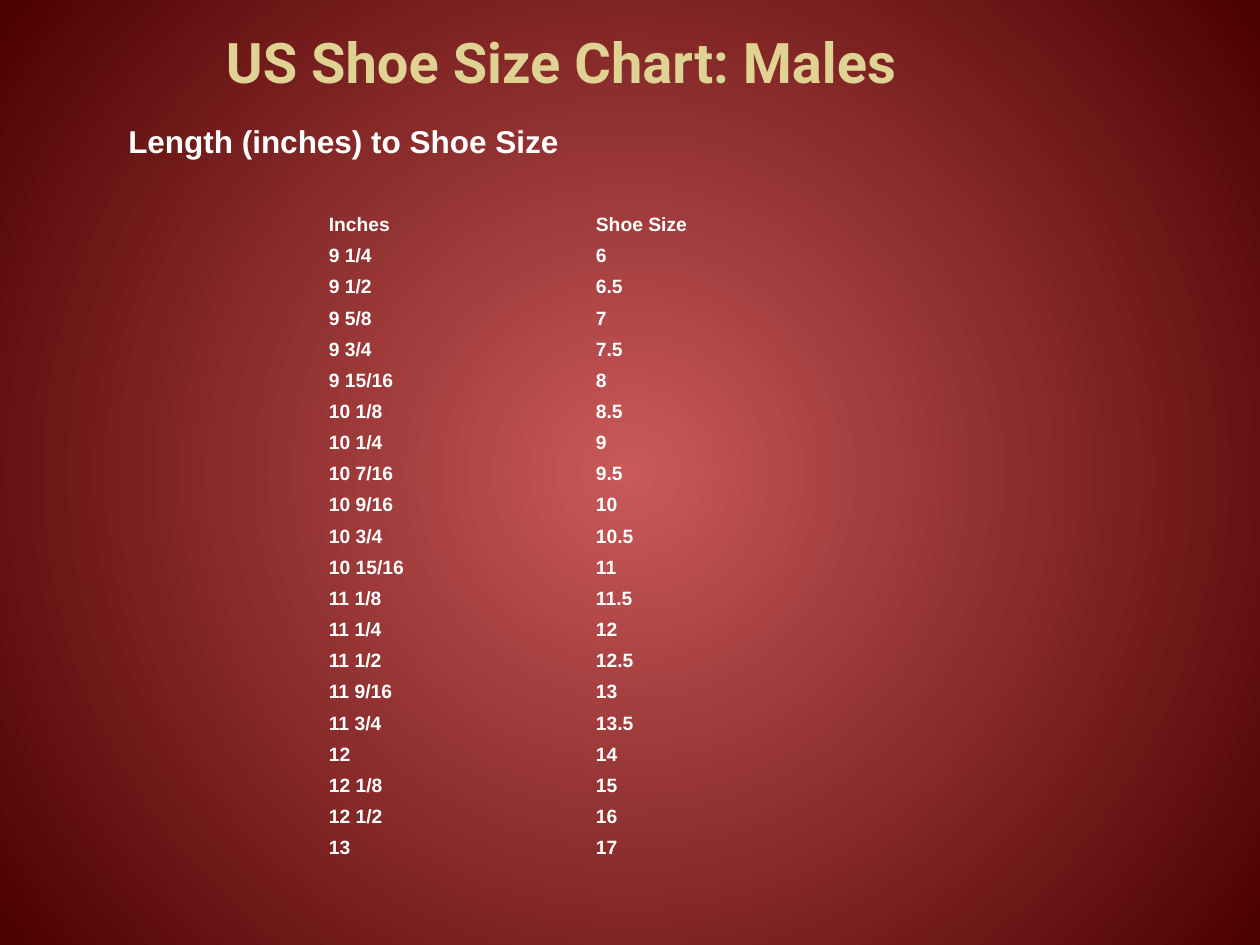
from pptx import Presentation
from pptx.dml.color import RGBColor
from pptx.enum.text import MSO_ANCHOR, PP_ALIGN
from pptx.oxml import parse_xml
from pptx.oxml.ns import nsdecls, qn
from pptx.util import Inches, Pt

LEFT, CENTER = PP_ALIGN.LEFT, PP_ALIGN.CENTER
TOP, MIDDLE = MSO_ANCHOR.TOP, MSO_ANCHOR.MIDDLE
BLANK = 6
NO_GRID = "{2D5ABB26-0587-4C30-8999-92F81FD0307C}"
COLORS = {"glow": "CA5959", "edge": "4C0000", "gold": "DFD293", "white": "FFFFFF"}

SIZES = [
    ("Inches", "Shoe Size"),
    ("9 1/4", "6"), ("9 1/2", "6.5"), ("9 5/8", "7"), ("9 3/4", "7.5"),
    ("9 15/16", "8"), ("10 1/8", "8.5"), ("10 1/4", "9"), ("10 7/16", "9.5"),
    ("10 9/16", "10"), ("10 3/4", "10.5"), ("10 15/16", "11"),
    ("11 1/8", "11.5"), ("11 1/4", "12"), ("11 1/2", "12.5"),
    ("11 9/16", "13"), ("11 3/4", "13.5"), ("12", "14"), ("12 1/8", "15"),
    ("12 1/2", "16"), ("13", "17"),
]


def color(name):
    return RGBColor.from_string(COLORS[name])


def write(frame, text, size=11, font="Arial", tint="white", align=LEFT):
    par = frame.paragraphs[0]
    par.alignment = align
    run = par.add_run()
    run.text = text
    run.font.size = Pt(size)
    run.font.name = font
    run.font.bold = True
    run.font.color.rgb = color(tint)


def add_text(slide, text, box, anchor=TOP, **style):
    frame = slide.shapes.add_textbox(*map(Inches, box)).text_frame
    frame.word_wrap = True
    frame.vertical_anchor = anchor
    write(frame, text, **style)


def paint(slide):
    """Radial glow from the middle of the slide."""
    fill = slide.background.fill
    fill.gradient()
    for stop, name in zip(fill.gradient_stops, ("glow", "edge")):
        stop.color.rgb = color(name)
    grad = slide.element.find(".//" + qn("a:gradFill"))
    grad.replace(grad.find(qn("a:lin")), parse_xml(
        f'<a:path {nsdecls("a")} path="circle">'
        '<a:fillToRect l="50000" t="50000" r="50000" b="50000"/></a:path>'))


def add_grid(slide, rows, box, widths):
    frame = slide.shapes.add_table(len(rows), len(widths), *map(Inches, box))
    table = frame.table
    table.first_row = table.horz_banding = False
    frame.element.find(".//" + qn("a:tableStyleId")).text = NO_GRID
    for col, width in zip(table.columns, widths):
        col.width = Inches(width)
    for r, row in enumerate(rows):
        for c, text in enumerate(row):
            cell = table.cell(r, c)
            cell.fill.background()
            cell.margin_left = cell.margin_right = Inches(0.06)
            cell.margin_top = cell.margin_bottom = Inches(0.03)
            write(cell.text_frame, text)


def main():
    deck = Presentation()
    deck.slide_width, deck.slide_height = Inches(10), Inches(7.5)
    slide = deck.slides.add_slide(deck.slide_layouts[BLANK])
    paint(slide)

    # Headings
    add_text(slide, "US Shoe Size Chart: Males", (0.08, 0.05, 8.75, 0.87),
             anchor=MIDDLE, size=32, font="Roboto", tint="gold", align=CENTER)
    add_text(slide, "Length (inches) to Shoe Size", (0.92, 0.92, 9.17, 0.66), size=18)

    # Size table
    add_grid(slide, SIZES, (2.55, 1.67, 4.9, 5.2), (2.12, 2.78))
    deck.save("out.pptx")


if __name__ == "__main__":
    main()
